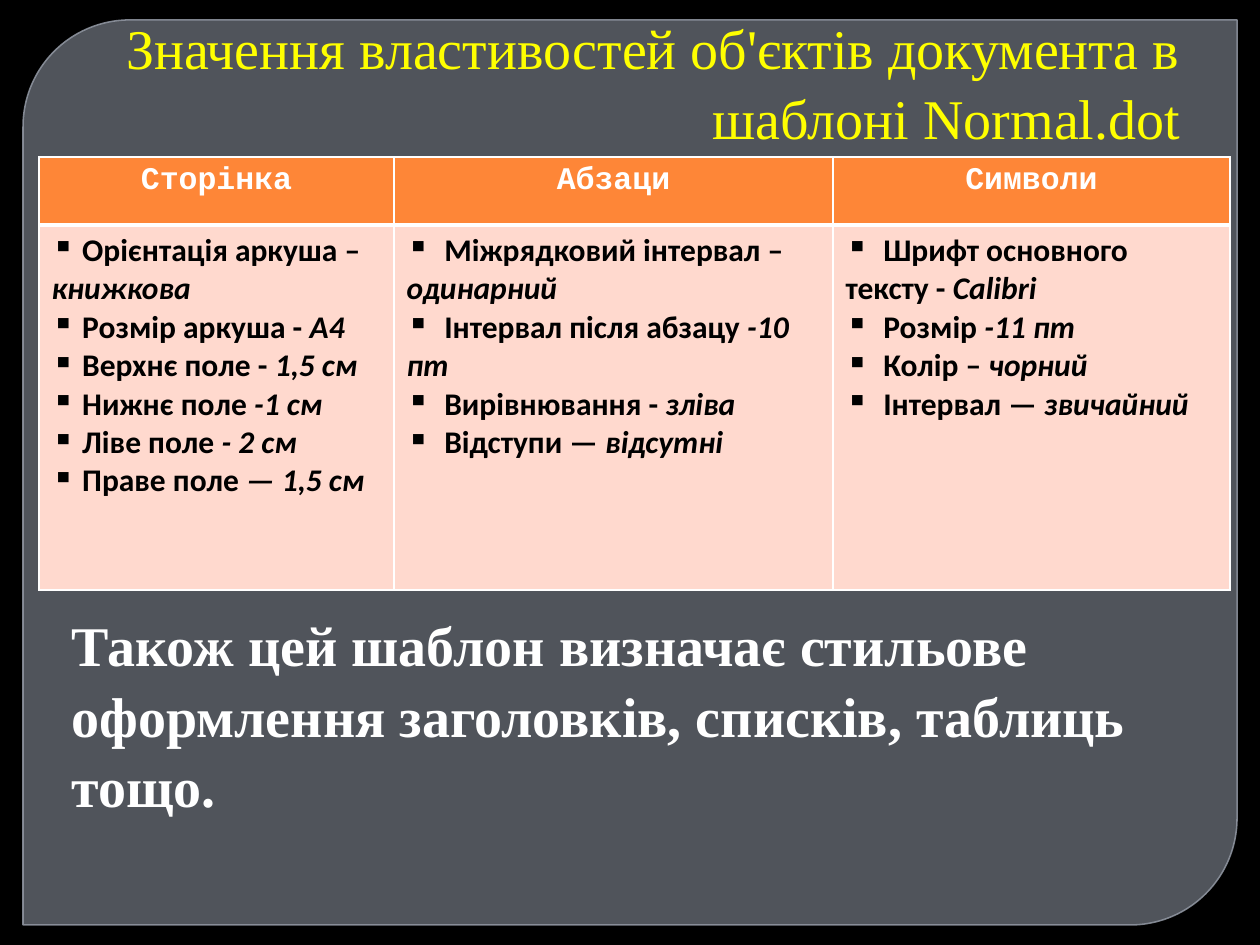
from lxml import etree
from pptx import Presentation
from pptx.dml.color import RGBColor
from pptx.enum.shapes import MSO_SHAPE
from pptx.enum.text import MSO_ANCHOR, PP_ALIGN
from pptx.oxml.ns import qn
from pptx.util import Pt

PX = 914400 / 126
BLACK = RGBColor(0, 0, 0)
WHITE = RGBColor(255, 255, 255)
YELLOW = RGBColor(255, 255, 0)
ORANGE = RGBColor(0xFE, 0x86, 0x37)
PEACH = RGBColor(0xFF, 0xD9, 0xCE)
SLATE = RGBColor(0x7C, 0x82, 0x8D)
EDGE = RGBColor(0x90, 0x96, 0xA1)
PANEL = MSO_SHAPE.ROUND_2_DIAG_RECTANGLE
LEFT, RIGHT, CENTER = PP_ALIGN.LEFT, PP_ALIGN.RIGHT, PP_ALIGN.CENTER
TOP, BOTTOM = MSO_ANCHOR.TOP, MSO_ANCHOR.BOTTOM
SERIF, SANS, MONO = "Times New Roman", "Calibri", "Courier New"

TITLE = "Значення властивостей об'єктів документа в шаблоні Normal.dot"
NOTE = ("Також цей шаблон визначає стильове оформлення заголовків, "
        "списків, таблиць тощо.")
WIDTHS = (355, 439, 397)
HEIGHTS = (68, 365)
# Heading of each column, then its pairs of property and value
COLUMNS = (
    ("Сторінка", (
        (" Орієнтація аркуша –", "книжкова"),
        (" Розмір аркуша -", " А4"),
        (" Верхнє поле -", " 1,5 см"),
        (" Нижнє поле", " -1 см"),
        (" Ліве поле", " - 2 см"),
        (" Праве поле", " — 1,5 см"))),
    ("Абзаци", (
        ("  Міжрядковий інтервал – ", "одинарний"),
        ("  Інтервал після абзацу", " -10 пт"),
        ("  Вирівнювання - ", "зліва"),
        ("  Відступи — ", "відсутні"))),
    ("Символи", (
        ("  Шрифт основного тексту - ", "Calibri"),
        ("  Розмір", " -11 пт"),
        ("  Колір – ", "чорний"),
        ("  Інтервал — ", "звичайний"))),
)


def px(*vals):
    return [round(v * PX) for v in vals]


def add_run(para, text, font, size, color, bold=True, italic=False):
    run = para.add_run()
    run.text = text
    face = run.font
    face.name, face.size = font, Pt(size)
    face.bold, face.italic = bold, italic
    face.color.rgb = color


def fade(fill, pct):
    """Make a solid fill see-through, pct being its opacity."""
    color = fill.find(".//" + qn("a:srgbClr"))
    etree.SubElement(color, qn("a:alpha"), val=str(pct * 1000))


def add_panel(slide):
    panel = slide.shapes.add_shape(PANEL, *px(23, 20, 1214, 905))
    panel.shadow.inherit = False
    panel.adjustments[0] = 0.118
    panel.adjustments[1] = 0
    panel.fill.solid()
    panel.fill.fore_color.rgb = SLATE
    panel.line.color.rgb = EDGE
    panel.line.width = Pt(0.87)
    props = panel.element.spPr
    fade(props.find(qn("a:solidFill")), 65)
    fade(props.find(qn("a:ln")), 88)


def add_text(slide, box, text, color, bold, align, anchor):
    frame = slide.shapes.add_textbox(*px(*box)).text_frame
    frame.word_wrap = True
    frame.vertical_anchor = anchor
    para = frame.paragraphs[0]
    para.alignment = align
    para.line_spacing = 1.05
    add_run(para, text, SERIF, 32, color, bold)


def style_cell(cell, color, top, bottom):
    """Set white borders, then the fill; top and bottom are in points."""
    props = cell._tc.get_or_add_tcPr()
    for side, width in (("L", 1), ("R", 1), ("T", top), ("B", bottom)):
        line = etree.SubElement(props, qn("a:ln" + side), w=str(Pt(width)))
        fill = etree.SubElement(line, qn("a:solidFill"))
        etree.SubElement(fill, qn("a:srgbClr"), val=str(WHITE))
    cell.fill.solid()
    cell.fill.fore_color.rgb = color


def add_bullet(para):
    props = para._p.get_or_add_pPr()
    props.set("marL", "0")
    props.set("indent", "0")
    etree.SubElement(props, qn("a:buChar"), char="▪")


def fill_list(cell, items):
    frame = cell.text_frame
    for i, (name, value) in enumerate(items):
        para = frame.add_paragraph() if i else frame.paragraphs[0]
        add_bullet(para)
        add_run(para, name, SANS, 18, BLACK)
        add_run(para, value, SANS, 18, BLACK, italic=True)


def add_grid(slide):
    box = px(39, 157, sum(WIDTHS), sum(HEIGHTS))
    table = slide.shapes.add_table(2, len(COLUMNS), *box).table
    for row, high in zip(table.rows, px(*HEIGHTS)):
        row.height = high
    for i, (head, items) in enumerate(COLUMNS):
        table.columns[i].width = px(WIDTHS[i])[0]
        cell = table.cell(0, i)
        style_cell(cell, ORANGE, 1, 3)
        para = cell.text_frame.paragraphs[0]
        para.alignment = CENTER
        add_run(para, head, MONO, 18, WHITE)
        cell = table.cell(1, i)
        style_cell(cell, PEACH, 3, 1)
        fill_list(cell, items)


def main():
    prs = Presentation()
    prs.slide_width, prs.slide_height = px(1260, 945)
    slide = prs.slides.add_slide(prs.slide_layouts[6])
    back = slide.background.fill
    back.solid()
    back.fore_color.rgb = BLACK
    add_panel(slide)
    add_text(slide, (59, 0, 1134, 157), TITLE, YELLOW, False, RIGHT, BOTTOM)
    add_text(slide, (59, 601, 1134, 197), NOTE, WHITE, True, LEFT, TOP)
    add_grid(slide)
    prs.save("out.pptx")


if __name__ == "__main__":
    main()
